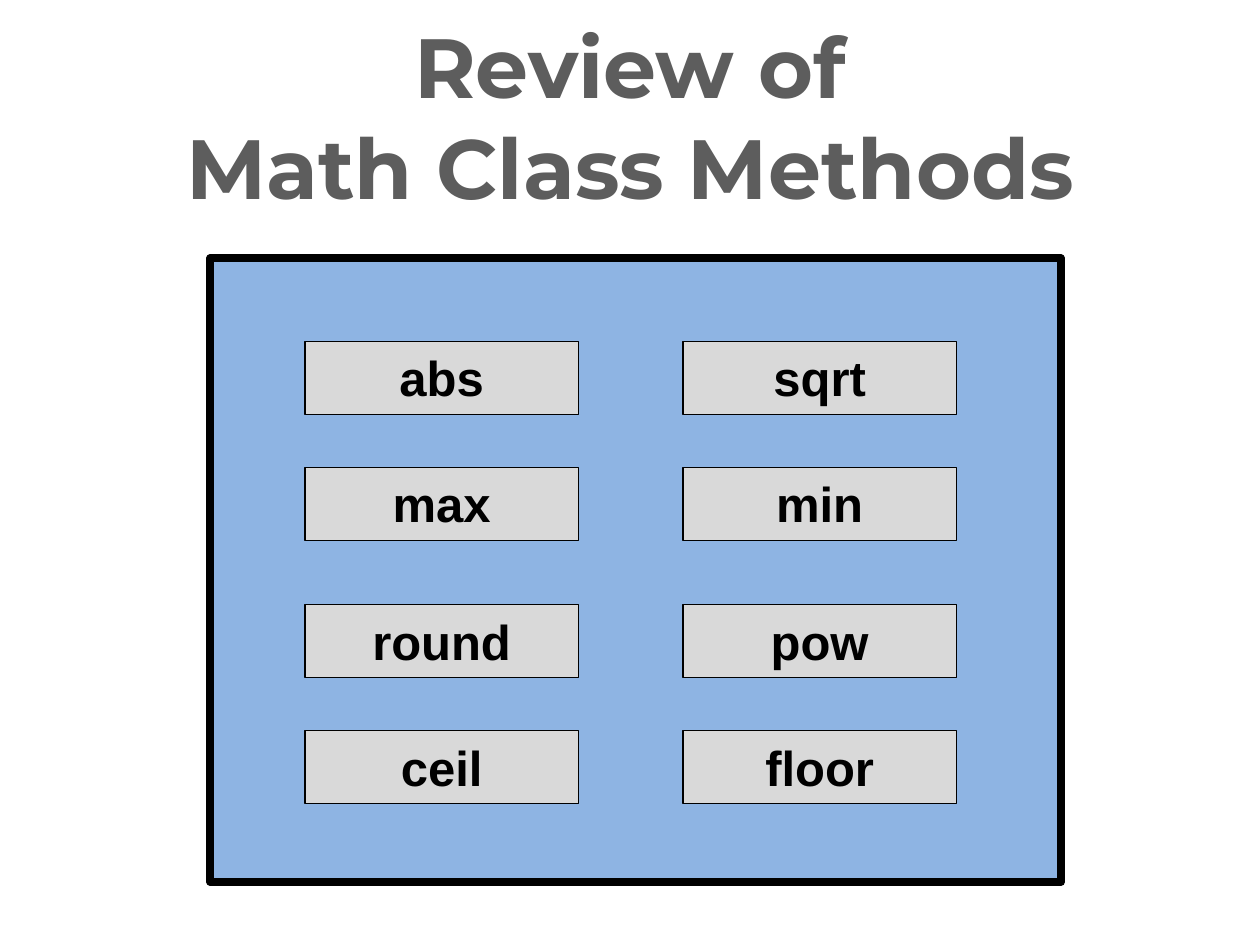
from dataclasses import dataclass

from pptx import Presentation
from pptx.dml.color import RGBColor
from pptx.enum.shapes import MSO_SHAPE
from pptx.enum.text import MSO_ANCHOR, MSO_AUTO_SIZE, PP_ALIGN
from pptx.shapes.autoshape import Shape
from pptx.shapes.group import GroupShape
from pptx.util import Inches, Pt

RECTANGLE = MSO_SHAPE.RECTANGLE
TOP, MIDDLE = MSO_ANCHOR.TOP, MSO_ANCHOR.MIDDLE
CENTER = PP_ALIGN.CENTER
NO_AUTOFIT = MSO_AUTO_SIZE.NONE

BLACK = RGBColor(0x00, 0x00, 0x00)
TITLE_GRAY = RGBColor(0x5D, 0x5D, 0x5D)
PANEL_BLUE = RGBColor(0x8E, 0xB4, 0xE3)
BUTTON_GRAY = RGBColor(0xD9, 0xD9, 0xD9)

# Grid of method buttons, in inches
COLUMN_LEFTS = (2.42, 5.42)
FIRST_ROW_TOP = 2.71
ROW_PITCH = 1.0
PAIR_PITCH = 2.09
BUTTON_WIDTH, BUTTON_HEIGHT = 2.17, 0.58

METHODS = (
    ("abs", "sqrt"),
    ("max", "min"),
    ("round", "pow"),
    ("ceil", "floor"),
)


@dataclass(frozen=True)
class Box:
    left: float
    top: float
    width: float
    height: float
    fill: RGBColor
    line_width: float


def add_box(group: GroupShape, box: Box) -> Shape:
    sp = group.shapes.add_shape(
        RECTANGLE, Inches(box.left), Inches(box.top),
        Inches(box.width), Inches(box.height))
    sp.shadow.inherit = False
    sp.fill.solid()
    sp.fill.fore_color.rgb = box.fill
    sp.line.color.rgb = BLACK
    sp.line.width = Pt(box.line_width)
    return sp


def set_text(sp: Shape, text: str, font: str, size: int,
             color: RGBColor, anchor: MSO_ANCHOR) -> None:
    tf = sp.text_frame
    tf.text = text
    tf.word_wrap = True
    tf.auto_size = NO_AUTOFIT
    tf.vertical_anchor = anchor
    p = tf.paragraphs[0]
    p.alignment = CENTER
    p.font.name = font
    p.font.size = Pt(size)
    p.font.bold = True
    p.font.color.rgb = color


def method_button(row: int, column: int) -> Box:
    """Place a button; rows come in pairs with a wider gap between pairs."""
    pair, row_in_pair = divmod(row, 2)
    top = FIRST_ROW_TOP + pair * PAIR_PITCH + row_in_pair * ROW_PITCH
    return Box(COLUMN_LEFTS[column], top, BUTTON_WIDTH, BUTTON_HEIGHT,
               BUTTON_GRAY, 0.75)


def main() -> None:
    prs = Presentation()
    prs.slide_width, prs.slide_height = Inches(10), Inches(7.5)
    s = prs.slides.add_slide(prs.slide_layouts[5])

    title = s.shapes.title
    title.left, title.top = 0, 0
    title.width, title.height = prs.slide_width, Inches(1.83)
    set_text(title, "Review of\vMath Class Methods", "Montserrat", 48,
             TITLE_GRAY, MIDDLE)

    calculator = s.shapes.add_group_shape()
    add_box(calculator, Box(1.67, 2.05, 6.75, 4.95, PANEL_BLUE, 4.5))
    for row, names in enumerate(METHODS):
        for column, name in enumerate(names):
            button = add_box(calculator, method_button(row, column))
            set_text(button, name, "Arial", 28, BLACK, TOP)

    prs.save("out.pptx")


if __name__ == "__main__":
    main()
